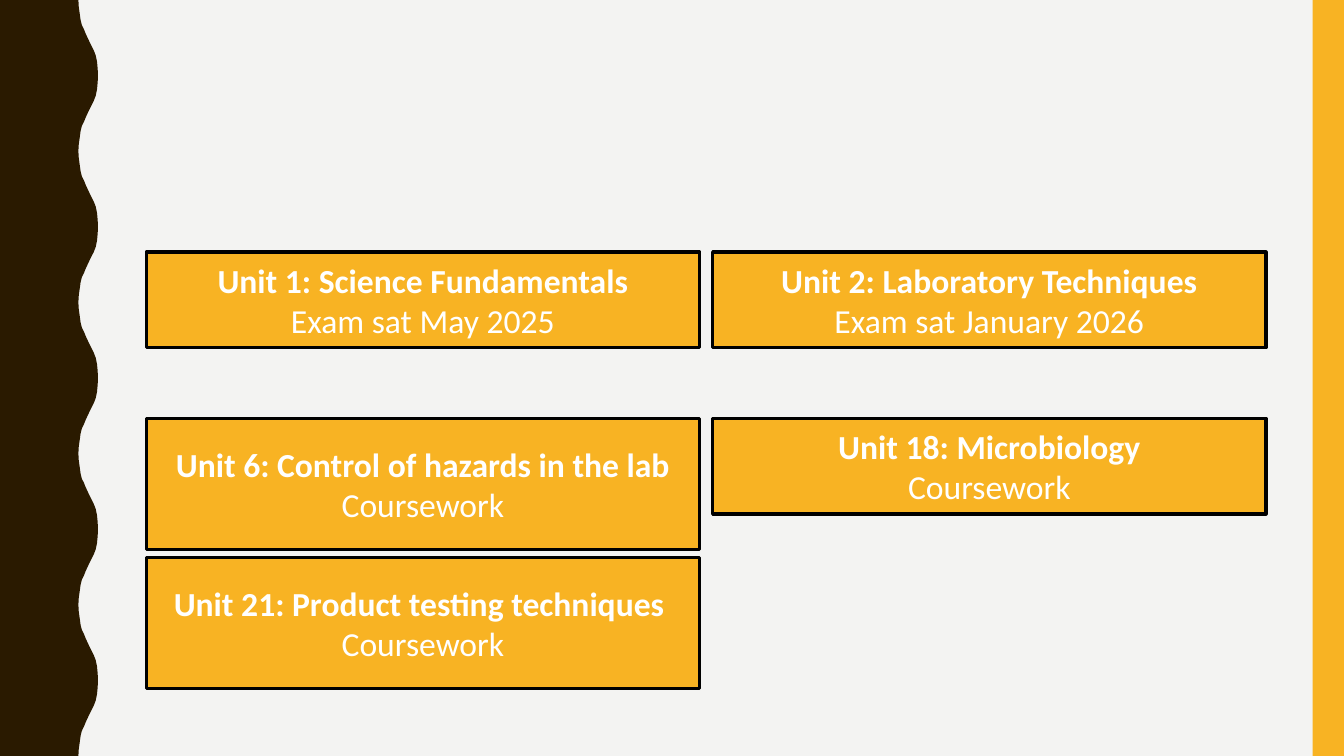
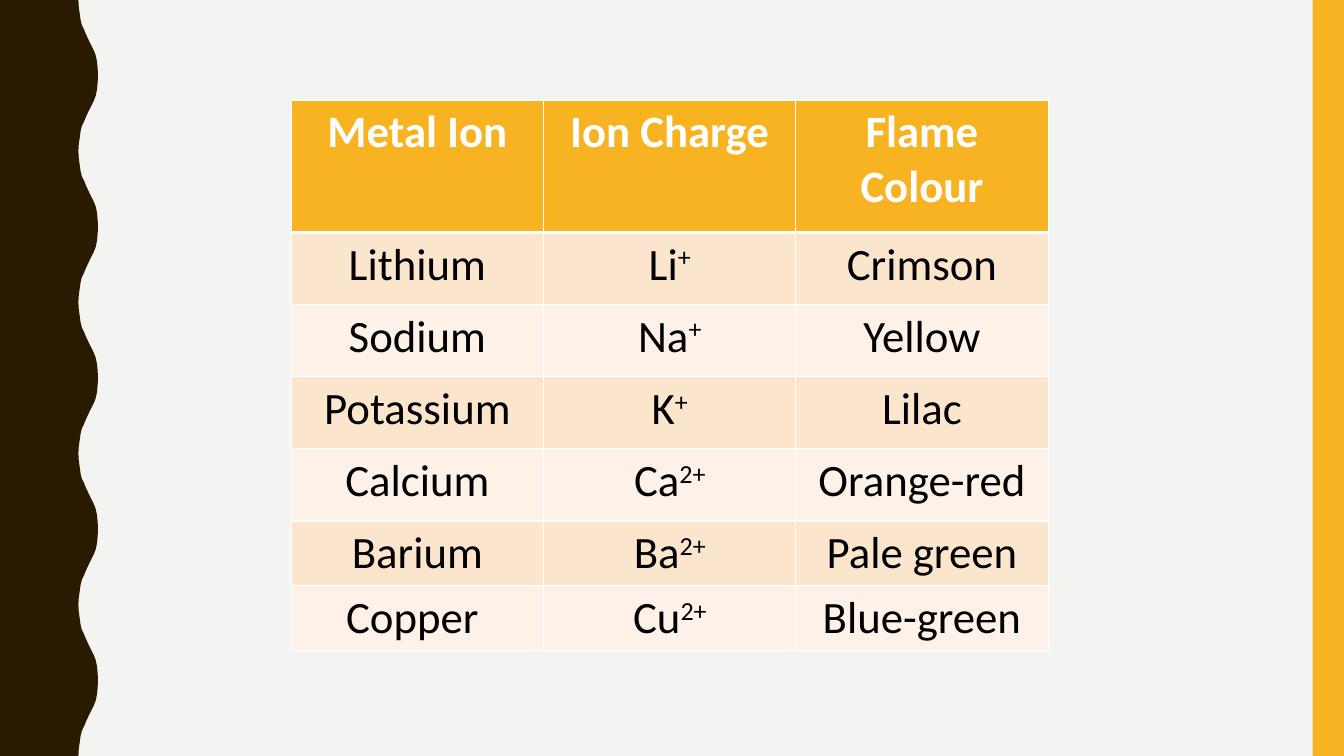
from dataclasses import dataclass

from pptx import Presentation
from pptx.dml.color import RGBColor
from pptx.enum.shapes import MSO_SHAPE
from pptx.enum.text import MSO_ANCHOR, PP_ALIGN
from pptx.oxml import parse_xml
from pptx.oxml.ns import nsdecls
from pptx.util import Pt

WIDE, HIGH = 960, 540

# Column, top, height, title, assessment
UNITS = [
    (0, 180, 68.4, "Unit 1: Science Fundamentals", "Exam sat May 2025"),
    (1, 180, 68.4, "Unit 2: Laboratory Techniques", "Exam sat January 2026"),
    (0, 298.8, 93.6, "Unit 6: Control of hazards in the lab", "Coursework"),
    (1, 298.8, 68.4, "Unit 18: Microbiology", "Coursework"),
    (0, 398.2, 93.6, "Unit 21: Product testing techniques ", "Coursework"),
]
LEFT, BOX, GAP = 104.4, 395.3, 9.3

HEADS = ("Metal Ion", "Ion Charge", "Flame Colour")
IONS = [
    ("Lithium", "Li", "+", "Crimson"),
    ("Sodium", "Na", "+", "Yellow"),
    ("Potassium", "K", "+", "Lilac"),
    ("Calcium", "Ca", "2+", "Orange-red"),
    ("Barium", "Ba", "2+", "Pale green"),
    ("Copper ", "Cu", "2+", "Blue-green"),
]
COL = 180.2
ROWS = [94.7] + [51.5] * 4 + [46.4] * 2

# Trough to crest of one wave
RISE = [
    (56, 0), (56.3, 5), (57, 10), (57.6, 14.4), (58.5, 18),
    (60, 21), (61.2, 24), (62.6, 27), (64, 30), (65.5, 33),
    (67, 36), (68.4, 39.6), (69.3, 44), (69.8, 49), (70, 54),
]
WAVES = 5


@dataclass(frozen=True)
class Theme:
    font: str = "Calibri"
    body: int = 24
    grid: int = 32
    page: str = "F3F3F2"
    dark: str = "2A1A00"
    gold: str = "F8B323"
    white: str = "FFFFFF"
    black: str = "000000"
    bands: tuple = ("FCE5CD", "FEF2E8")


THEME = Theme()


def paint(fill, hue):
    fill.solid()
    fill.fore_color.rgb = RGBColor.from_string(hue)


def style(para, size, hue, bold):
    para.alignment = PP_ALIGN.CENTER
    font = para.font
    font.name, font.size, font.bold = THEME.font, Pt(size), bold
    font.color.rgb = RGBColor.from_string(hue)


def finish(shape, hue):
    """Flat fill with neither shadow nor outline."""
    shape.shadow.inherit = False
    paint(shape.fill, hue)
    shape.line.fill.background()
    return shape


def block(slide, x, y, w, h):
    shape = slide.shapes.add_shape(
        MSO_SHAPE.RECTANGLE, Pt(x), Pt(y), Pt(w), Pt(h))
    return finish(shape, THEME.gold)


def frame(slide):
    """Wavy band on the left, gold band on the right."""
    step = HIGH / WAVES
    wave = RISE + [(x, step - y) for x, y in RISE[-2::-1]]
    edge = [(x, y + step * n) for n in range(WAVES) for x, y in wave]
    form = slide.shapes.build_freeform(0, 0)
    form.add_line_segments(
        [(Pt(x), Pt(y)) for x, y in edge + [(0, HIGH)]], close=True)
    finish(form.convert_to_shape(), THEME.dark)
    block(slide, 937.6, 0, WIDE - 937.6, HIGH)


def list_units(slide):
    for col, top, high, title, kind in UNITS:
        box = block(slide, LEFT + col * (BOX + GAP), top, BOX, high)
        paint(box.line.fill, THEME.black)
        box.line.width = Pt(2.25)
        text = box.text_frame
        text.word_wrap = True
        text.vertical_anchor = MSO_ANCHOR.MIDDLE
        text.text = f"{title}\n{kind}"
        for para, bold in zip(text.paragraphs, (True, False)):
            style(para, THEME.body, THEME.white, bold)


def border(cell, row):
    """White rules, thicker between the heading and the first row."""
    props = cell._tc.get_or_add_tcPr()
    widths = {"L": 1, "R": 1, "T": 3 if row == 1 else 1,
              "B": 3 if row == 0 else 1}
    for side, width in widths.items():
        props.append(parse_xml(
            f'<a:ln{side} {nsdecls("a")} w="{Pt(width)}"><a:solidFill>'
            f'<a:srgbClr val="{THEME.white}"/></a:solidFill></a:ln{side}>'))


def fill_cell(cell, row, text, power=""):
    head = row == 0
    border(cell, row)
    cell.fill.solid()
    paint(cell.fill, THEME.gold if head else THEME.bands[(row - 1) % 2])
    para = cell.text_frame.paragraphs[0]
    style(para, THEME.grid, THEME.white if head else THEME.black, head)
    para.add_run().text = text
    if power:
        run = para.add_run()
        run.text = power
        run._r.get_or_add_rPr().set("baseline", "30000")


def list_ions(slide):
    table = slide.shapes.add_table(
        len(ROWS), len(HEADS), Pt(208.1), Pt(71.5),
        Pt(COL * len(HEADS)), Pt(sum(ROWS))).table
    for col in table.columns:
        col.width = Pt(COL)
    for row, high in zip(table.rows, ROWS):
        row.height = Pt(high)
    grid = [[(head,) for head in HEADS]]
    grid += [[(name,), (ion, power), (hue,)] for name, ion, power, hue in IONS]
    for r, line in enumerate(grid):
        for c, parts in enumerate(line):
            fill_cell(table.cell(r, c), r, *parts)


def main():
    deck = Presentation()
    deck.slide_width, deck.slide_height = Pt(WIDE), Pt(HIGH)
    paint(deck.slide_master.background.fill, THEME.page)
    for build in (list_units, list_ions):
        slide = deck.slides.add_slide(deck.slide_layouts[6])
        frame(slide)
        build(slide)
    deck.save("out.pptx")


if __name__ == "__main__":
    main()
